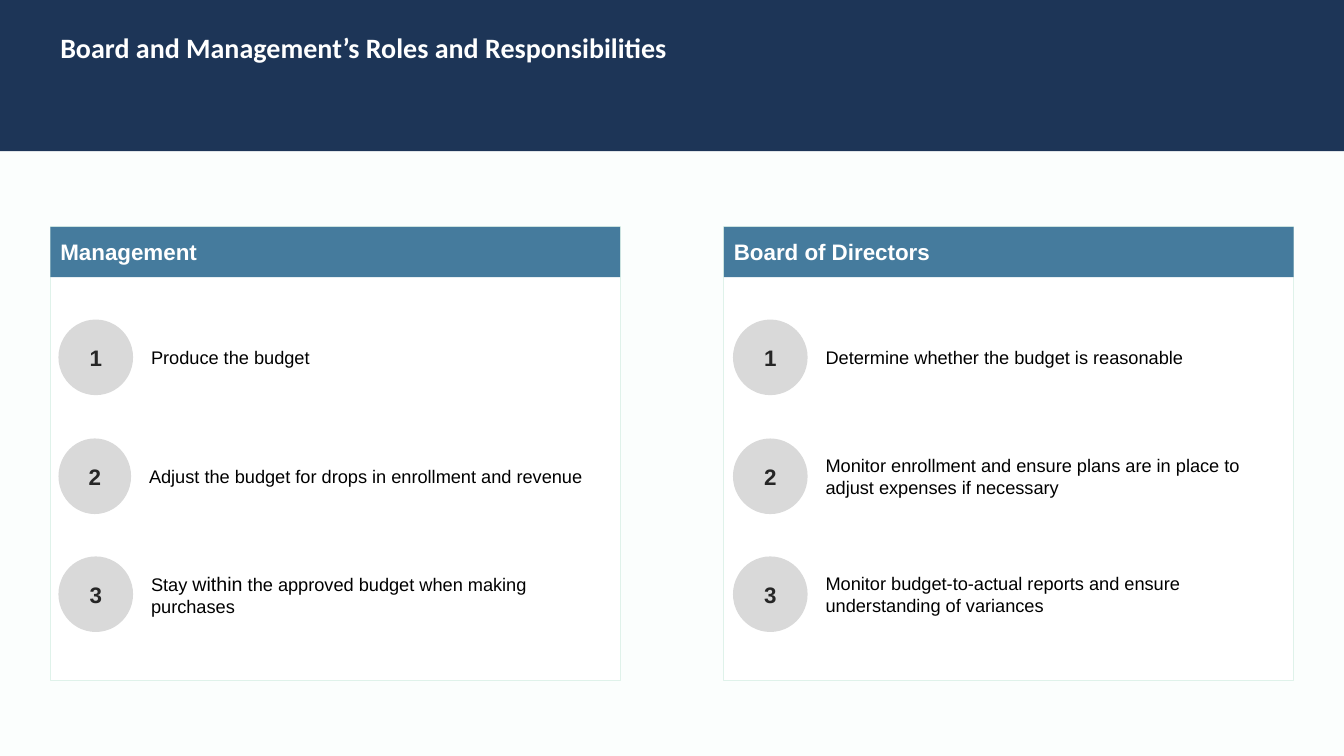
from pptx import Presentation
from pptx.dml.color import RGBColor
from pptx.enum.shapes import MSO_SHAPE
from pptx.enum.text import MSO_ANCHOR, MSO_AUTO_SIZE, PP_ALIGN
from pptx.util import Emu, Pt

SCALE = 9144
PANEL_W, PANEL_H, HEADER_H = 565, 450, 50
PANEL_TOP, ITEM_TOPS, ITEM_H, GAP = 225, (317, 435, 552), 75, 8

COLUMNS = [
    ("Management", 50, 58, [
        (74, [("Produce the budget", 13)]),
        (72, [("Adjust the budget for drops in enrollment and revenue", 13)]),
        (74, [("Stay ", 13), ("within", 14),
              (" the approved budget when making purchases", 13)]),
    ]),
    ("Board of Directors", 718, 727, [
        (74, [("Determine whether the budget is reasonable", 13)]),
        (74, [("Monitor enrollment and ensure plans are in place to "
               "adjust expenses if necessary", 13)]),
        (74, [("Monitor budget-to-actual reports and ensure "
               "understanding of variances", 13)]),
    ]),
]


def px(*lengths):
    return [Emu(n * SCALE) for n in lengths]


def color(value):
    return RGBColor.from_string(value)


class Deck:
    """Holds the style and the current slide, and draws its elements."""

    navy, blue, grey = "1D3557", "457B9D", "D9D9D9"
    white, black, ink = "FFFFFF", "000000", "262626"
    paper, border = "FBFEFD", "DFF2EA"

    def __init__(self, width, height):
        self.prs = Presentation()
        self.prs.slide_width, self.prs.slide_height = px(width, height)
        self.s = self.prs.slides.add_slide(self.prs.slide_layouts[6])
        fill = self.s.background.fill
        fill.solid()
        fill.fore_color.rgb = color(self.paper)

    def shape(self, box, fill, line=None, kind=MSO_SHAPE.RECTANGLE, parent=None):
        sp = (parent or self.s).shapes.add_shape(kind, *px(*box))
        sp.shadow.inherit = False
        sp.fill.solid()
        sp.fill.fore_color.rgb = color(fill)
        if line:
            sp.line.color.rgb = color(line)
            sp.line.width = Pt(0.75)
        else:
            sp.line.fill.background()
        return sp

    def text(self, sp, runs, ink, bold=False, font="Arial",
             align=PP_ALIGN.LEFT, anchor=MSO_ANCHOR.MIDDLE):
        tf = sp.text_frame
        tf.word_wrap = True
        tf.vertical_anchor = anchor
        p = tf.paragraphs[0]
        p.alignment = align
        for words, size in runs:
            r = p.add_run()
            r.text = words
            r.font.name = font
            r.font.size = Pt(size)
            r.font.bold = bold
            r.font.color.rgb = color(ink)

    def title(self, box, words):
        sp = self.s.shapes.add_textbox(*px(*box))
        self.text(sp, [(words, 20)], self.white, True, "Calibri",
                  anchor=MSO_ANCHOR.TOP)
        sp.text_frame.auto_size = MSO_AUTO_SIZE.SHAPE_TO_FIT_TEXT

    def header(self, box, words):
        self.text(self.shape(box, self.blue), [(words, 16)], self.white, True)

    def item(self, number, left, top, disc_w, right, runs):
        grp = self.s.shapes.add_group_shape()
        x = left + disc_w + GAP
        sp = grp.shapes.add_textbox(*px(x, top, right - x, ITEM_H))
        self.text(sp, runs, self.black)
        disc = self.shape((left, top, disc_w, ITEM_H), self.grey,
                          kind=MSO_SHAPE.OVAL, parent=grp)
        self.text(disc, [(str(number), 16)], self.ink, True,
                  align=PP_ALIGN.CENTER)

    def column(self, heading, left, disc_left, items):
        self.shape((left, PANEL_TOP, PANEL_W, PANEL_H), self.white, self.border)
        self.header((left, PANEL_TOP, PANEL_W, HEADER_H), heading)
        for number, (top, (disc_w, runs)) in enumerate(zip(ITEM_TOPS, items), 1):
            self.item(number, disc_left, top, disc_w, left + PANEL_W, runs)


def main():
    deck = Deck(1333, 750)
    deck.shape((0, 0, 1333, 150), deck.navy)
    deck.title((50, 25, 1233, 44),
               "Board and Management’s Roles and Responsibilities")
    for column in COLUMNS:
        deck.column(*column)
    deck.prs.save("out.pptx")


if __name__ == "__main__":
    main()
